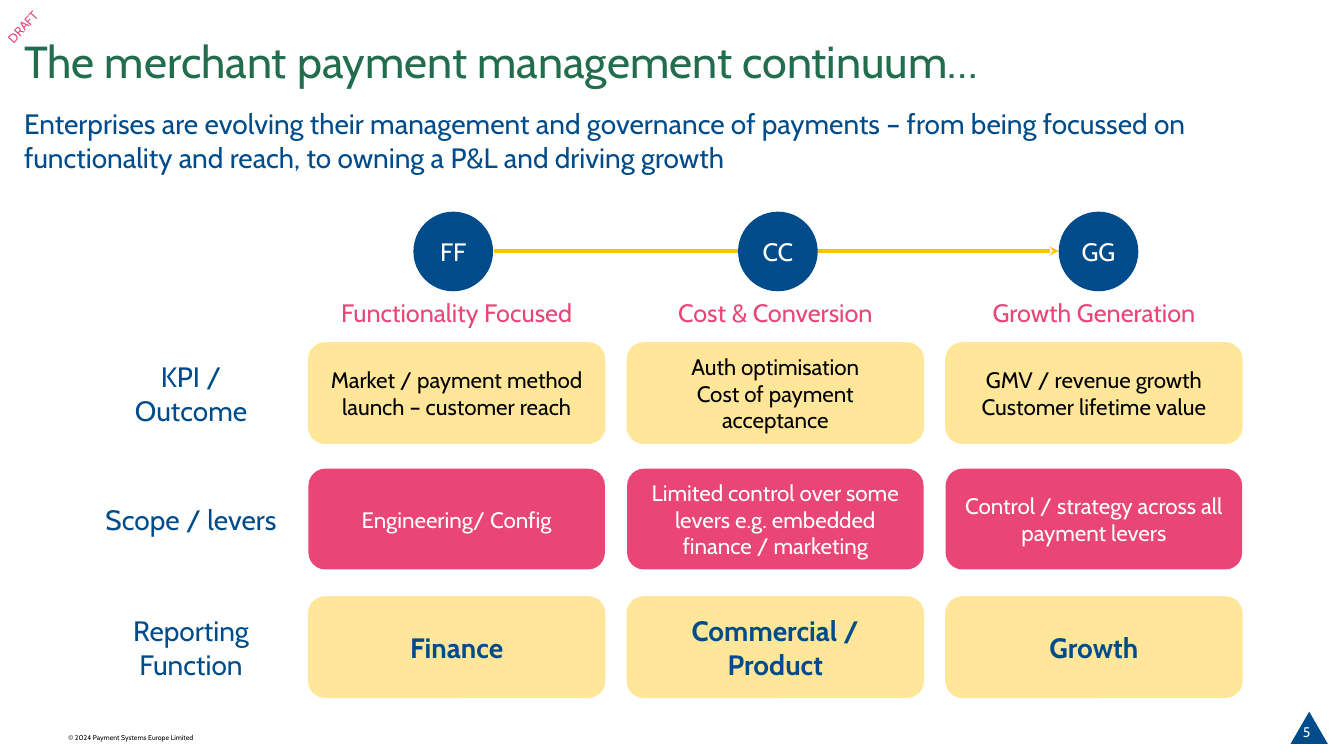
import pptx
import pptx.util
import pptx.dml.color
import pptx.enum.shapes
import pptx.enum.text
import pptx.oxml.ns
from lxml import etree

EMU_PER_PX = 9144
FONT = "Cabin"
BLUE, PINK, GREEN = "004C8A", "E94577", "236D4F"
CREAM, GOLD, WHITE, BLACK = "FFE699", "FFC000", "FFFFFF", "000000"
ShapeType = pptx.enum.shapes.MSO_SHAPE
Anchor = pptx.enum.text.MSO_ANCHOR
Align = pptx.enum.text.PP_ALIGN

COLUMN_LEFT, COLUMN_STEP, COLUMN_WIDTH = 306, 316, 294
ROW_HEIGHT = 100
STAGES = [
    ("FF", "Functionality Focused", 410),
    ("CC", "Cost & Conversion", 732),
    ("GG", "Growth Generation", 1050),
]
ROWS = [
    ("KPI / Outcome", 340, CREAM, dict(size=16, color=BLACK), [
        "Market / payment method launch – customer reach",
        "Auth optimisation\nCost of payment acceptance",
        "GMV / revenue growth\nCustomer lifetime value",
    ]),
    ("Scope / levers", 465, PINK, dict(size=16, color=WHITE), [
        "Engineering/ Config",
        "Limited control over some levers e.g. embedded finance / marketing",
        "Control / strategy across all payment levers",
    ]),
    ("Reporting Function", 592, CREAM, dict(size=20, color=BLUE, bold=True), [
        "Finance",
        "Commercial /\nProduct",
        "Growth",
    ]),
]


def px(length):
    return pptx.util.Emu(length * EMU_PER_PX)


def rgb(color):
    return pptx.dml.color.RGBColor.from_string(color)


def write_text(shape, text, size=18, color=BLACK, bold=False, align=Align.CENTER,
               anchor=Anchor.MIDDLE, wrap=True, spacing=None, inset=None):
    frame = shape.text_frame
    frame.word_wrap = wrap
    frame.vertical_anchor = anchor
    if inset is not None:
        frame.margin_left = frame.margin_right = px(inset)
    for index, line in enumerate(text.split("\n")):
        paragraph = frame.add_paragraph() if index else frame.paragraphs[0]
        paragraph.alignment = align
        if spacing:
            paragraph.line_spacing = spacing
        run = paragraph.add_run()
        run.text = line
        run.font.name = FONT
        run.font.size = pptx.util.Pt(size)
        run.font.bold = bold
        run.font.color.rgb = rgb(color)


def add_text(slide, box, text, **text_format):
    shape = slide.shapes.add_textbox(*map(px, box))
    write_text(shape, text, **text_format)
    return shape


def add_filled_shape(slide, kind, box, fill, line=None):
    shape = slide.shapes.add_shape(kind, *map(px, box))
    shape.shadow.inherit = False
    shape.fill.solid()
    shape.fill.fore_color.rgb = rgb(fill)
    if line:
        shape.line.color.rgb = rgb(line)
        shape.line.width = pptx.util.Pt(0.75)
    else:
        shape.line.fill.background()
    return shape


def add_arrow(slide, start_x, end_x, y):
    connector = slide.shapes.add_connector(
        pptx.enum.shapes.MSO_CONNECTOR.STRAIGHT, px(start_x), px(y), px(end_x), px(y))
    connector.line.color.rgb = rgb(GOLD)
    connector.line.width = pptx.util.Pt(2.25)
    qualified = pptx.oxml.ns.qn
    etree.SubElement(connector.line._get_or_add_ln(), qualified("a:tailEnd"), type="stealth")
    etree.SubElement(connector._element.spPr, qualified("a:effectLst"))


def add_frame(slide):
    draft = add_text(slide, (-17, 6, 79, 41), "DRAFT", size=9, color=PINK, wrap=False)
    draft.rotation = 312.3
    add_filled_shape(slide, ShapeType.ISOSCELES_TRIANGLE, (1280, 706, 37, 32), BLUE)
    add_text(slide, (1267, 706, 58, 40), "5", size=10, color=WHITE)
    add_text(slide, (58, 723, 147, 19), "© 2024 Payment Systems Europe Limited",
             size=5, align=Align.LEFT, anchor=Anchor.TOP, wrap=False)
    add_text(slide, (14, 35, 1277, 62), "The merchant payment management continuum…",
             size=32, color=GREEN, align=Align.LEFT, anchor=Anchor.TOP, spacing=0.9)
    add_text(slide, (14, 101, 1277, 62),
             "Enterprises are evolving their management and governance of payments – "
             "from being focussed on functionality and reach, to owning a P&L and driving growth",
             size=20, color=BLUE, align=Align.LEFT, anchor=Anchor.TOP)


def add_stages(slide):
    add_arrow(slide, 490, 1050, 249)
    for column, (initials, name, circle_left) in enumerate(STAGES):
        circle = add_filled_shape(slide, ShapeType.OVAL, (circle_left, 210, 79, 79), BLUE)
        write_text(circle, initials, color=WHITE, inset=0)
        left = COLUMN_LEFT + column * COLUMN_STEP
        add_text(slide, (left, 289, COLUMN_WIDTH, 42), name, color=PINK)


def add_rows(slide):
    for label, top, fill, text_format, cells in ROWS:
        add_text(slide, (94, top, 191, ROW_HEIGHT), label, size=20, color=BLUE)
        line = CREAM if fill == CREAM else None
        for column, text in enumerate(cells):
            left = COLUMN_LEFT + column * COLUMN_STEP
            card = add_filled_shape(slide, ShapeType.ROUNDED_RECTANGLE,
                                    (left, top, COLUMN_WIDTH, ROW_HEIGHT), fill, line)
            write_text(card, text, **text_format)


def main():
    presentation = pptx.Presentation()
    presentation.slide_width = px(1333)
    presentation.slide_height = px(750)
    slide = presentation.slides.add_slide(presentation.slide_layouts[6])
    add_frame(slide)
    add_stages(slide)
    add_rows(slide)
    presentation.save("out.pptx")


if __name__ == "__main__":
    main()
